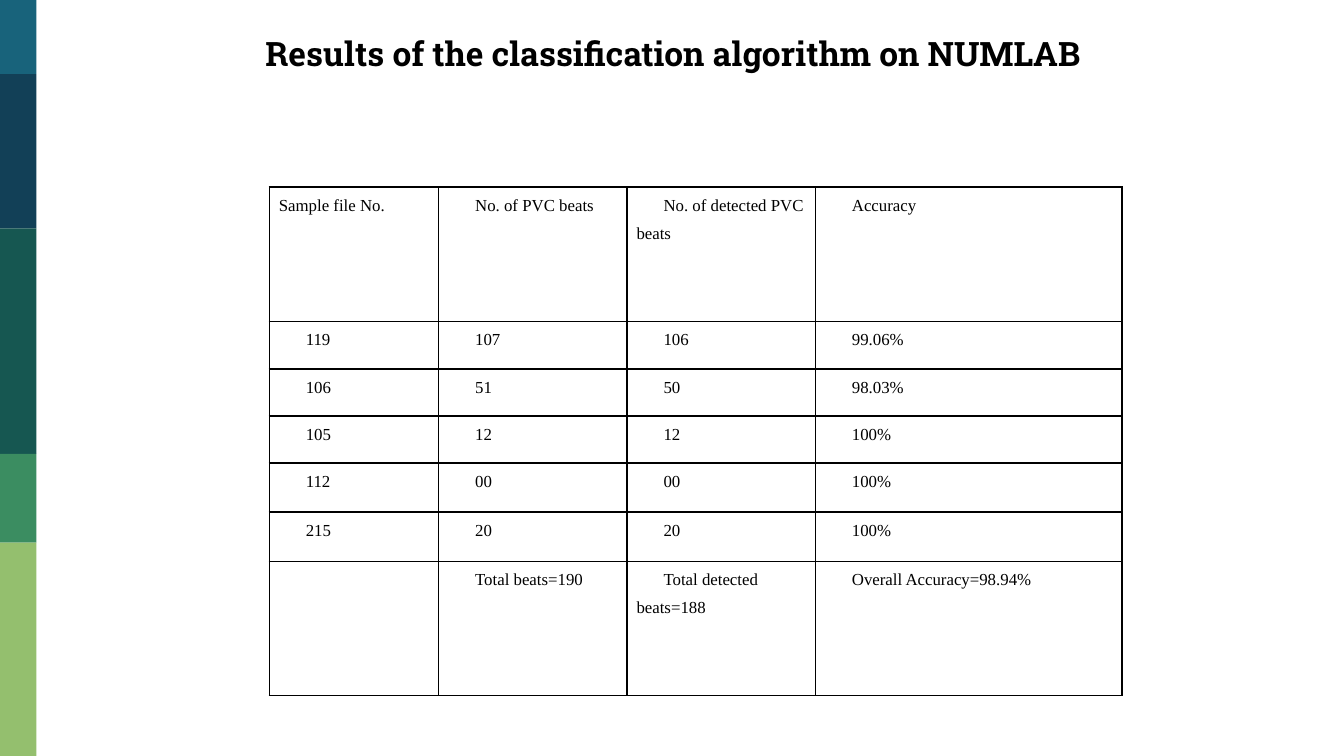
from dataclasses import dataclass
from itertools import pairwise

from lxml.etree import SubElement
from pptx import Presentation
from pptx.dml.color import RGBColor
from pptx.enum.shapes import MSO_SHAPE
from pptx.enum.text import MSO_ANCHOR, MSO_AUTO_SIZE, PP_ALIGN
from pptx.oxml.ns import qn
from pptx.util import Cm, Pt


@dataclass(frozen=True)
class Theme:
    """Colours, fonts and type sizes of the slide."""
    ink: str = "000000"
    bars: tuple = ("18637B", "124057", "165751", "3B8D61", "94BF6E")
    head: str = "Roboto Slab"
    body: str = "Times New Roman"
    large: int = 18
    small: int = 9


THEME = Theme()
WIDTH, HEIGHT = 25.4, 14.29
EDGES = (0, 1.4, 4.32, 8.58, 10.26, HEIGHT)
COLS = (3.2, 3.56, 3.56, 5.79)
ROWS = (2.54, 0.89, 0.89, 0.89, 0.93, 0.93, 2.54)
RESULTS = (
    ("Sample file No.", "No. of PVC beats", "No. of detected PVC beats", "Accuracy"),
    ("119", "107", "106", "99.06%"),
    ("106", "51", "50", "98.03%"),
    ("105", "12", "12", "100%"),
    ("112", "00", "00", "100%"),
    ("215", "20", "20", "100%"),
    ("", "Total beats=190", "Total detected beats=188", "Overall Accuracy=98.94%"),
)


def style(font, name, size, bold=False):
    """Set the face, size, weight and colour of a font."""
    font.name, font.size, font.bold = name, Pt(size), bold
    font.color.rgb = RGBColor.from_string(THEME.ink)


def add_bars(slide):
    """Stack the coloured bars down the left edge."""
    for (top, end), fill in zip(pairwise(EDGES), THEME.bars):
        bar = slide.shapes.add_shape(
            MSO_SHAPE.RECTANGLE, 0, Cm(top), Cm(0.69), Cm(end - top))
        bar.shadow.inherit = False
        bar.fill.solid()
        bar.fill.fore_color.rgb = RGBColor.from_string(fill)
        bar.line.fill.background()


def set_title(slide, text):
    """Place and format the title."""
    title = slide.shapes.title
    title.left, title.top = Cm(2.74), Cm(0.58)
    title.width, title.height = Cm(20.12), Cm(0.84)
    frame = title.text_frame
    frame.text = text
    frame.word_wrap = True
    frame.auto_size = MSO_AUTO_SIZE.NONE
    frame.vertical_anchor = MSO_ANCHOR.MIDDLE
    frame.margin_left = frame.margin_right = Cm(0.25)
    frame.margin_top = frame.margin_bottom = Cm(0.25)
    para = frame.paragraphs[0]
    para.alignment = PP_ALIGN.CENTER
    para.line_spacing = 1.0
    style(para.runs[0].font, THEME.head, THEME.large, True)


def add_border(cell):
    """Draw a thin line on all four sides of a cell."""
    props = cell._tc.get_or_add_tcPr()
    for spot, side in enumerate(("lnL", "lnR", "lnT", "lnB")):
        line = SubElement(props, qn(f"a:{side}"), w=str(Pt(1)))
        fill = SubElement(line, qn("a:solidFill"))
        SubElement(fill, qn("a:srgbClr"), val=THEME.ink)
        props.insert(spot, line)


def fill_cell(cell, text, first):
    """Write one cell, with the first line indented unless it is the first cell."""
    cell.fill.background()
    add_border(cell)
    cell.margin_left = cell.margin_right = Cm(0.18)
    cell.margin_top = cell.margin_bottom = 0
    cell.text_frame.text = text
    para = cell.text_frame.paragraphs[0]
    para.line_spacing = 1.5
    para.space_after = Pt(6)
    para.alignment = PP_ALIGN.JUSTIFY if first else PP_ALIGN.LEFT
    if not first:
        props = para._p.get_or_add_pPr()
        props.set("marL", "0")
        props.set("indent", str(Cm(0.51)))
    for run in para.runs:
        style(run.font, THEME.body, THEME.small)


def add_results(slide):
    """Add the table of results."""
    table = slide.shapes.add_table(
        len(ROWS), len(COLS), Cm(5.09), Cm(3.54),
        Cm(sum(COLS)), Cm(sum(ROWS))).table
    table.first_row = table.horz_banding = False
    for col, width in zip(table.columns, COLS):
        col.width = Cm(width)
    for row, height in zip(table.rows, ROWS):
        row.height = Cm(height)
    for r, texts in enumerate(RESULTS):
        for c, text in enumerate(texts):
            fill_cell(table.cell(r, c), text, r == c == 0)


def main():
    """Build and save the slide."""
    deck = Presentation()
    deck.slide_width, deck.slide_height = Cm(WIDTH), Cm(HEIGHT)
    slide = deck.slides.add_slide(deck.slide_layouts[5])
    add_bars(slide)
    set_title(slide, "Results of the classification algorithm on NUMLAB ")
    add_results(slide)
    deck.save("out.pptx")


if __name__ == "__main__":
    main()
